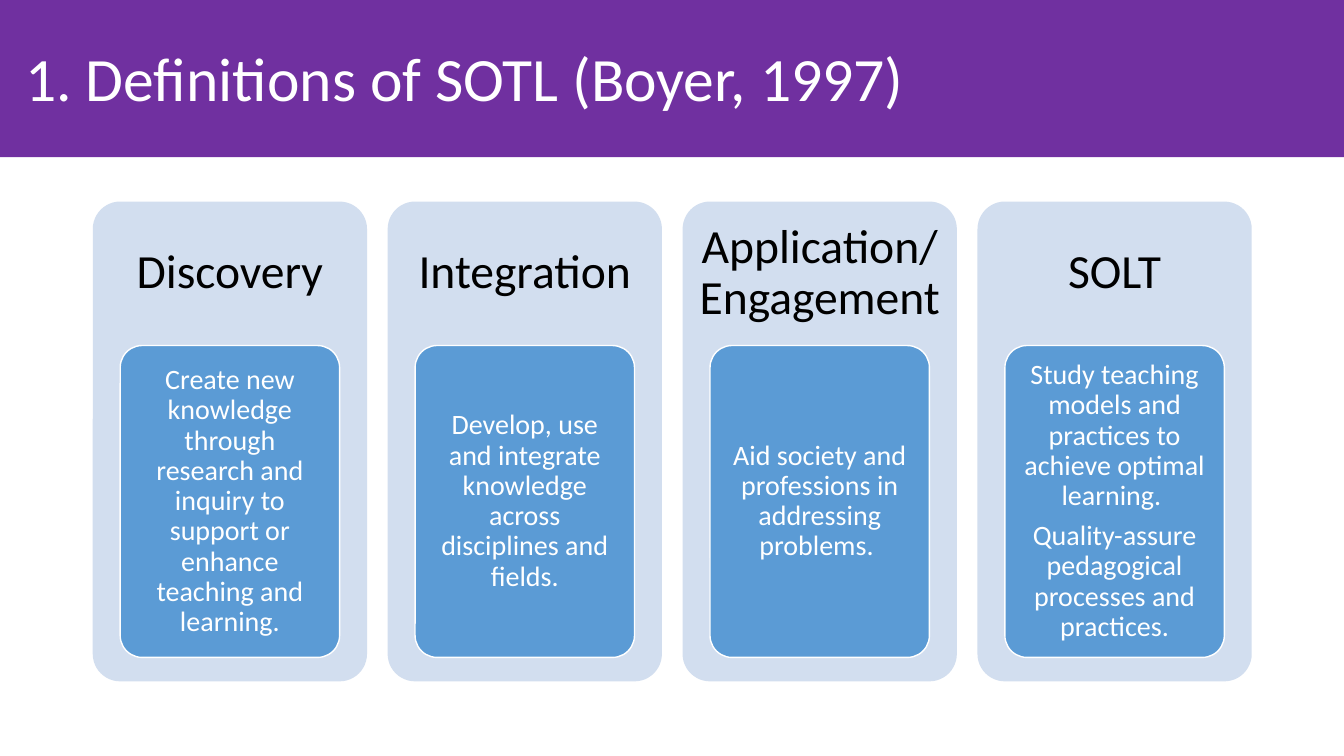
import pptx
import pptx.util
import pptx.dml.color
import pptx.enum.shapes
import pptx.enum.text

PURPLE = pptx.dml.color.RGBColor(0x70, 0x30, 0xA0)
PALE_BLUE = pptx.dml.color.RGBColor(0xD2, 0xDE, 0xEF)
BLUE = pptx.dml.color.RGBColor(0x5B, 0x9B, 0xD5)
WHITE = pptx.dml.color.RGBColor(0xFF, 0xFF, 0xFF)
BLACK = pptx.dml.color.RGBColor(0x00, 0x00, 0x00)

SHAPES = pptx.enum.shapes.MSO_SHAPE
ALIGN = pptx.enum.text.PP_ALIGN
Inches = pptx.util.Inches

CARD_LEFT, CARD_TOP, CARD_STEP = 0.92, 2, 2.925
CARD_WIDTH, CARD_HEIGHT = 2.72, 4.76
HEADING_HEIGHT = 0.3 * CARD_HEIGHT
PANEL_WIDTH, PANEL_HEIGHT = 0.8 * CARD_WIDTH, 0.65 * CARD_HEIGHT

DEFINITIONS = [
    ("Discovery", ["Create new knowledge through research and inquiry to support or enhance teaching and learning."]),
    ("Integration", ["Develop, use and integrate knowledge across disciplines and fields."]),
    ("Application/ Engagement", ["Aid society and professions in addressing problems. "]),
    ("SOLT", [
        "Study teaching models and practices to achieve optimal learning. ",
        "Quality-assure pedagogical processes and practices.",
    ]),
]


def add_block(page, kind, left, top, width, height, fill):
    block = page.shapes.add_shape(kind, Inches(left), Inches(top), Inches(width), Inches(height))
    block.shadow.inherit = False
    block.fill.solid()
    block.fill.fore_color.rgb = fill
    block.line.fill.background()
    if kind == SHAPES.ROUNDED_RECTANGLE:
        block.adjustments[0] = 0.1
    return block


def write(box, lines, size, color, align, insets, gap):
    frame = box.text_frame
    frame.word_wrap = True
    frame.auto_size = pptx.enum.text.MSO_AUTO_SIZE.NONE
    frame.vertical_anchor = pptx.enum.text.MSO_ANCHOR.MIDDLE
    frame.margin_left = frame.margin_right = Inches(insets[0])
    frame.margin_top, frame.margin_bottom = Inches(insets[1]), Inches(insets[2])
    for index, line in enumerate(lines):
        para = frame.paragraphs[0] if index == 0 else frame.add_paragraph()
        para.alignment = align
        para.line_spacing = 0.9
        para.space_after = pptx.util.Pt(gap * size)
        span = para.add_run()
        span.text = line
        span.font.name = "Calibri"
        span.font.size = pptx.util.Pt(size)
        span.font.color.rgb = color


deck = pptx.Presentation()
deck.slide_width, deck.slide_height = Inches(13.33), Inches(7.5)
page = deck.slides.add_slide(deck.slide_layouts[5])

banner = add_block(page, SHAPES.RECTANGLE, 0, 0, 13.33, 1.56, PURPLE)
title = page.shapes.title
title.element.addprevious(banner.element)
title.left, title.top = Inches(0.15), Inches(0.08)
title.width, title.height = Inches(11.5), Inches(1.45)
write(title, ["1. Definitions of SOTL (Boyer, 1997)"], 44, WHITE, ALIGN.LEFT, (0.1, 0.05, 0.05), 0)

for column, (heading, meanings) in enumerate(DEFINITIONS):
    left = CARD_LEFT + column * CARD_STEP
    card = add_block(page, SHAPES.ROUNDED_RECTANGLE, left, CARD_TOP, CARD_WIDTH, CARD_HEIGHT, PALE_BLUE)
    write(card, [heading], 34, BLACK, ALIGN.CENTER,
          (0.06, 0.06, CARD_HEIGHT - HEADING_HEIGHT + 0.06), 0.35)
    panel = add_block(page, SHAPES.ROUNDED_RECTANGLE, left + (CARD_WIDTH - PANEL_WIDTH) / 2,
                      CARD_TOP + HEADING_HEIGHT, PANEL_WIDTH, PANEL_HEIGHT, BLUE)
    panel.line.color.rgb = WHITE
    panel.line.width = pptx.util.Pt(1)
    write(panel, meanings, 20, WHITE, ALIGN.CENTER, (0.06, 0.04, 0.04), 0.35)

deck.save("out.pptx")
